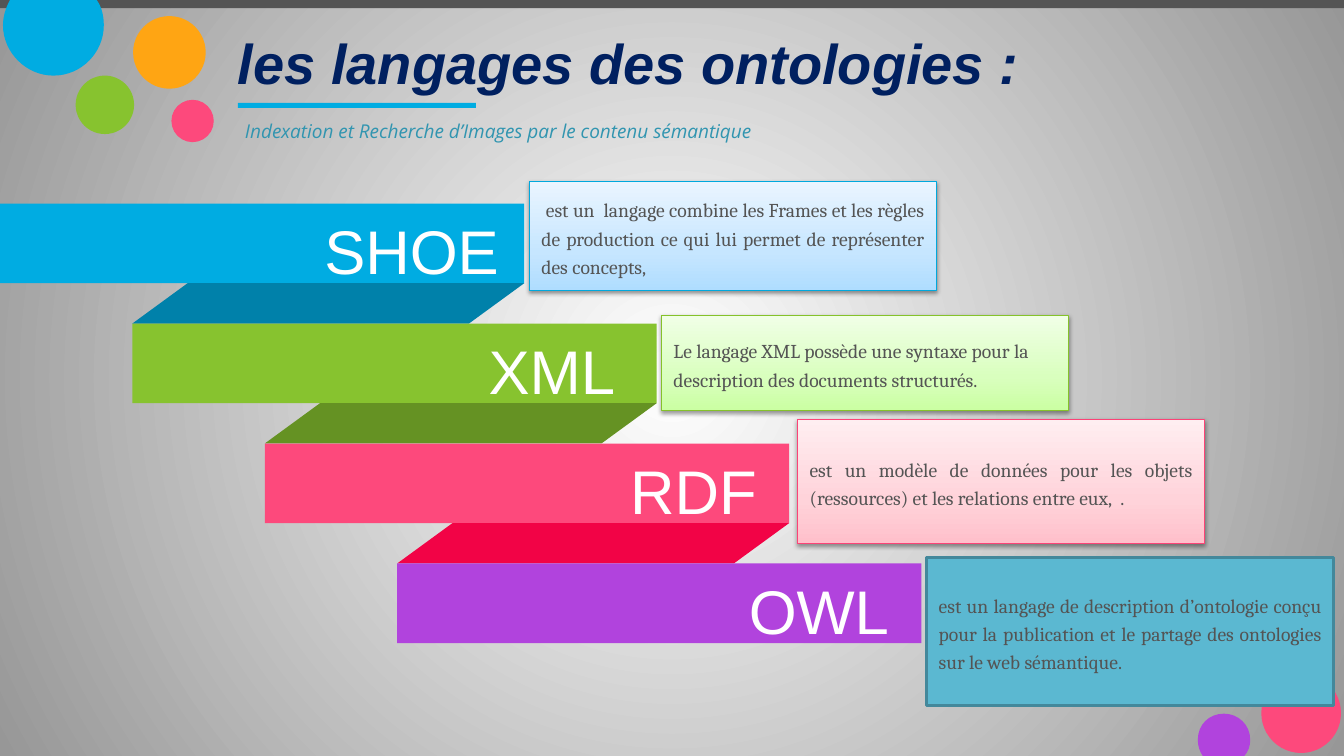
from dataclasses import dataclass

from pptx import Presentation
from pptx.dml.color import RGBColor
from pptx.enum import shapes as kinds, text as types
from pptx.oxml import parse_xml
from pptx.oxml.ns import nsdecls, qn
from pptx.util import Inches, Pt

WIDE, HIGH = 13.33, 7.5
RECT = kinds.MSO_SHAPE.RECTANGLE
OVAL = kinds.MSO_SHAPE.OVAL
SLANT = kinds.MSO_SHAPE.PARALLELOGRAM
LEFT, RIGHT, JUST = (types.PP_ALIGN.LEFT, types.PP_ALIGN.RIGHT,
                     types.PP_ALIGN.JUSTIFY)
TOP, MIDDLE = types.MSO_ANCHOR.TOP, types.MSO_ANCHOR.MIDDLE


@dataclass(frozen=True)
class Theme:
    gray: str = "545454"
    blue: str = "00ACE2"
    green: str = "87C32F"
    pink: str = "FD497C"
    orange: str = "FFA513"
    purple: str = "B143DD"
    teal: str = "5BB8D1"
    folds: tuple = ("0081AA", "659223", "F20346")
    back: tuple = ((0, "FFFFFF"), (100, "979797"))
    sky: tuple = ((0, "AFDDFF"), (35, "C6E6FF"), (100, "EAF5FF"))
    lime: tuple = ((0, "CBFFA3"), (35, "D9FFBE"), (100, "F0FFE6"))
    rose: tuple = ((0, "FFC0CB"), (35, "FFD3DA"), (100, "FFEEF1"))
    title: tuple = ("Arial", 40, "002060")
    sub: tuple = ("Open Sans", 13.6, "3195B0")
    label: tuple = ("Arial", 44, "FFFFFF")
    note: tuple = ("Cambria", 14, "545454")


THEME = Theme()

# Each step of an outline is one point for a line, three for a curve.
SUN = ((0.1, 0), (
    ((0.96, 0),),
    ((1.01, 0.07), (1.03, 0.16), (1.03, 0.25)),
    ((1.03, 0.52), (0.81, 0.75), (0.53, 0.75)),
    ((0.26, 0.75), (0.03, 0.52), (0.03, 0.25)),
    ((0.03, 0.16), (0.06, 0.07), (0.1, 0))))
DROP = ((12.14, 7.08), (
    ((12.28, 7.08), (12.4, 7.19), (12.4, 7.34)),
    ((12.4, 7.4), (12.38, 7.46), (12.34, 7.5)),
    ((11.93, 7.5),),
    ((11.9, 7.46), (11.88, 7.4), (11.88, 7.34)),
    ((11.88, 7.19), (11.99, 7.08), (12.14, 7.08))))

# name, colour, right inset
BARS = (
    ("SHOE", THEME.blue, 0.12),
    ("XML", THEME.green, 0.28),
    ("RDF", THEME.pink, 0.19),
    ("OWL", THEME.purple, 0.19),
)

# left, top, height, fill, line colour, line width, alignment, words
NOTES = (
    (5.25, 1.8, 1.08, THEME.sky, "00A8DD", 0.75, JUST,
     " est un  langage combine les Frames et les règles de production "
     "ce qui lui permet de représenter des concepts,"),
    (9.19, 5.53, 1.47, THEME.teal, "43889B", 2, JUST,
     "est un langage de description d’ontologie conçu pour la publication "
     "et le partage des ontologies sur le web sémantique."),
    (6.56, 3.13, 0.94, THEME.lime, "85C22A", 0.75, LEFT,
     "Le langage XML possède une syntaxe pour la description des "
     "documents structurés."),
    (7.91, 4.16, 1.23, THEME.rose, "FC4377", 0.75, JUST,
     "est un modèle de données pour les objets (ressources) et les "
     "relations entre eux,  ."),
)


def blend(fill, root, stops, kind):
    """Give a fill colour stops and a kind of gradient, as XML."""
    fill.gradient()
    grad = root.find(".//" + qn("a:gradFill"))
    grad.clear()
    marks = "".join(f'<a:gs pos="{at * 1000}"><a:srgbClr val="{hue}"/></a:gs>'
                    for at, hue in stops)
    grad.append(parse_xml(f'<a:gsLst {nsdecls("a")}>{marks}</a:gsLst>'))
    grad.append(parse_xml(kind))


def paint(shape, color):
    shape.shadow.inherit = False
    shape.fill.solid()
    shape.fill.fore_color.rgb = RGBColor.from_string(color)
    shape.line.fill.background()


def block(slide, kind, box, color):
    shape = slide.shapes.add_shape(kind, *map(Inches, box))
    paint(shape, color)
    return shape


def disc(slide, x, y, size, color):
    block(slide, OVAL, (x, y, size, size), color)


def curve(slide, outline, color):
    """Draw a closed outline, then bend the steps that are curves."""
    start, steps = outline
    ends = [step[-1] for step in steps]
    left, top = map(min, zip(*ends))
    unit = 1000
    form = slide.shapes.build_freeform(
        start[0] * unit, start[1] * unit, scale=Inches(1) / unit)
    form.add_line_segments([(x * unit, y * unit) for x, y in ends])
    shape = form.convert_to_shape()
    lines = list(shape._element.iter(qn("a:lnTo")))
    for line, step in zip(lines, steps):
        if len(step) == 3:
            dots = "".join(f'<a:pt x="{round((x - left) * unit)}" '
                           f'y="{round((y - top) * unit)}"/>' for x, y in step)
            line.getparent().replace(line, parse_xml(
                f'<a:cubicBezTo {nsdecls("a")}>{dots}</a:cubicBezTo>'))
    paint(shape, color)


def write(shape, words, style, align=LEFT, anchor=MIDDLE, right=0.12,
          para=None, **font):
    frame = shape.text_frame
    name, size, color = style
    line = frame.paragraphs[0]
    run = line.add_run()
    run.text = words
    formats = (
        (frame, dict(word_wrap=True, vertical_anchor=anchor,
                     margin_left=Inches(0.12), margin_right=Inches(right),
                     margin_top=Inches(0.06), margin_bottom=Inches(0.06))),
        (line, dict(alignment=align, **(para or {}))),
        (run.font, dict(name=name, size=Pt(size), **font)),
    )
    for item, values in formats:
        for key, value in values.items():
            setattr(item, key, value)
    run.font.color.rgb = RGBColor.from_string(color)


def label(slide, box, words, style, **kind):
    write(slide.shapes.add_textbox(*map(Inches, box)), words, style, **kind)


def shade(shape):
    shape._element.spPr.find(qn("a:effectLst")).append(parse_xml(
        f'<a:outerShdw {nsdecls("a")} blurRad="{Pt(3.1)}" dist="{Pt(1.6)}" '
        'dir="5400000" rotWithShape="0"><a:srgbClr val="000000">'
        '<a:alpha val="38000"/></a:srgbClr></a:outerShdw>'))


def note(slide, x, y, high, fill, edge, width, align, words):
    flat = isinstance(fill, str)
    shape = block(slide, RECT, (x, y, 4.04, high), fill if flat else edge)
    if not flat:
        blend(shape.fill, shape._element.spPr, fill,
              f'<a:lin {nsdecls("a")} ang="16200000" scaled="0"/>')
        shade(shape)
    shape.line.color.rgb = RGBColor.from_string(edge)
    shape.line.width = Pt(width)
    write(shape, words, THEME.note, align,
          para=dict(line_spacing=1.2, space_before=Pt(8)))


def decor(slide):
    blend(slide.background.fill, slide.element, THEME.back,
          f'<a:path {nsdecls("a")} path="circle"><a:fillToRect l="50000" '
          't="50000" r="50000" b="50000"/></a:path>')
    block(slide, RECT, (0, 0, WIDE, 0.08), THEME.gray)
    disc(slide, 1.7, 0.99, 0.42, THEME.pink)
    curve(slide, SUN, THEME.blue)
    disc(slide, 0.75, 0.75, 0.58, THEME.green)
    disc(slide, 1.32, 0.16, 0.72, THEME.orange)
    disc(slide, 12.51, 6.68, 0.79, THEME.pink)
    curve(slide, DROP, THEME.purple)


def header(slide):
    block(slide, RECT, (2.36, 1.02, 2.36, 0.05), THEME.blue)
    label(slide, (2.24, 0.18, 10.46, 0.88), "les langages des ontologies :",
          THEME.title, bold=True, italic=True)
    label(slide, (2.31, 1.13, 10.45, 0.37),
          "Indexation et Recherche d’Images par le contenu sémantique",
          THEME.sub, anchor=TOP, para=dict(space_before=Pt(8)), italic=True)


def stairs(slide):
    """Draw the ribbon: bars one step apart, with a fold between each two."""
    wide, high, across, down = 5.2, 0.79, 3.94 / 3, 1.19
    for i, (name, color, right) in enumerate(BARS):
        x, y = i * across, 2.02 + i * down
        block(slide, RECT, (x, y, wide, high), color)
        if i < len(THEME.folds):
            fold = block(slide, SLANT, (x + across, y + high, wide - across,
                                        down - high), THEME.folds[i])
            fold.adjustments[0] = 1.37
        label(slide, (x + 0.31, y + 0.13, 4.76, 0.52), name, THEME.label,
              align=RIGHT, right=right,
              para=dict(line_spacing=1.2, space_before=Pt(8)))


def main():
    deck = Presentation()
    deck.slide_width, deck.slide_height = Inches(WIDE), Inches(HIGH)
    slide = deck.slides.add_slide(deck.slide_layouts[6])
    decor(slide)
    header(slide)
    stairs(slide)
    for item in NOTES:
        note(slide, *item)
    deck.save("out.pptx")


if __name__ == "__main__":
    main()
